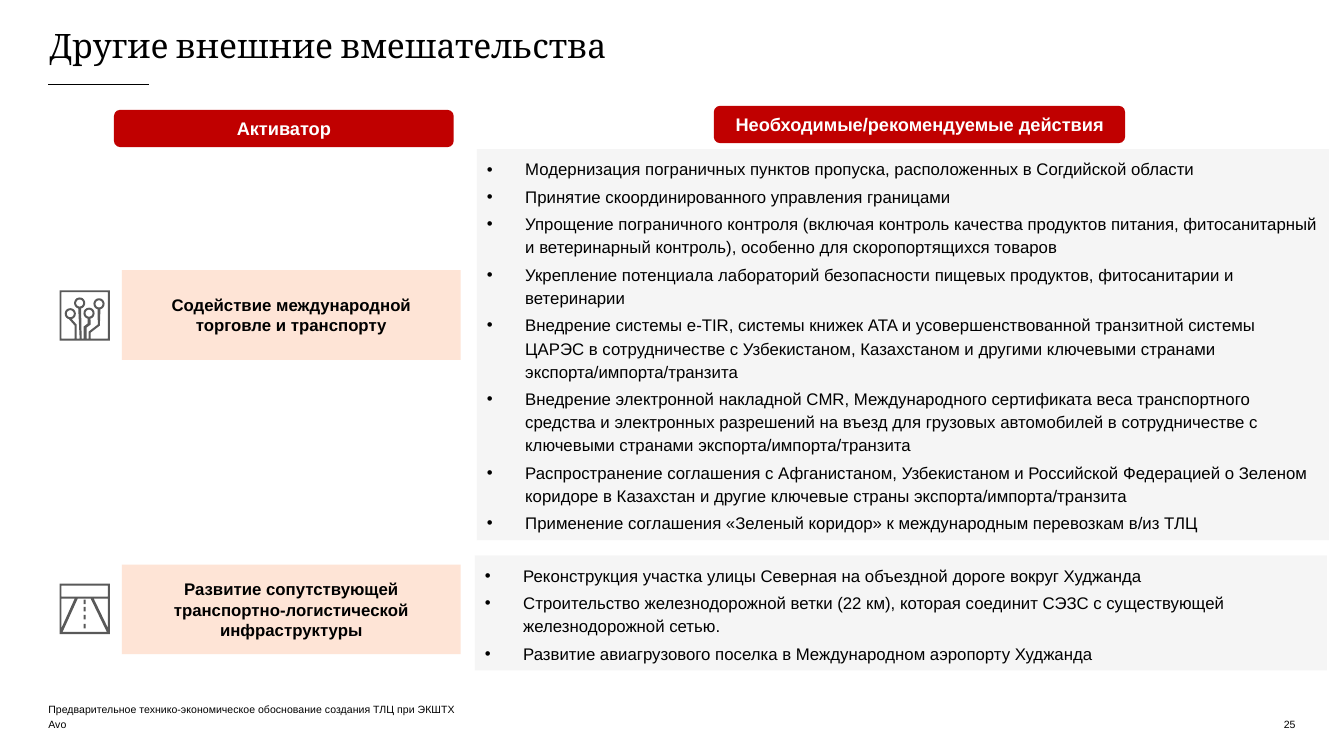
from dataclasses import dataclass
from math import cos, radians, sin

from lxml.etree import SubElement
from pptx import Presentation
from pptx.dml.color import RGBColor
from pptx.enum.shapes import MSO_CONNECTOR as Connector, MSO_SHAPE as Preset
from pptx.enum.text import MSO_ANCHOR as Anchor, MSO_AUTO_SIZE as AutoSize, PP_ALIGN as Align
from pptx.oxml.ns import qn
from pptx.util import Inches, Pt

BLACK = RGBColor(0x00, 0x00, 0x00)
WHITE = RGBColor(0xFF, 0xFF, 0xFF)
RED = RGBColor(0xC0, 0x00, 0x00)
PEACH = RGBColor(0xFE, 0xD8, 0xC4)
PALE_GREY = RGBColor(0xF2, 0xF2, 0xF2)
ICON_GREY = RGBColor(0x59, 0x59, 0x59)

WIDTH, HEIGHT = Inches(13.33), Inches(7.5)
MARGIN = 3.6
Points = list[tuple[float, float]]


@dataclass
class Area:
    """Left, top, width and height in percent of the slide."""
    left: float
    top: float
    width: float
    height: float

    def emu(self) -> tuple[int, int, int, int]:
        return (int(WIDTH * self.left / 100), int(HEIGHT * self.top / 100),
                int(WIDTH * self.width / 100), int(HEIGHT * self.height / 100))


@dataclass
class Style:
    size: float
    color: RGBColor = BLACK
    bold: bool = False
    font: str = "Arial"
    align: Align = Align.LEFT


@dataclass
class Label:
    text: str
    area: Area
    style: Style


@dataclass
class Enabler:
    name: str
    top: float
    actions: list[str]
    actions_area: Area
    icon_top: float
    icon: list[Points]


@dataclass
class Node:
    """Circuit node: centre and the two sides of its trace."""
    x: float
    y: float
    right: Points
    left: Points


def arc(x: float, y: float, radius: float, start: int, end: int) -> Points:
    return [(x + radius * cos(radians(angle)), y + radius * sin(radians(angle)))
            for angle in range(start, end - 1, -15)]


def rectangle(left: float, top: float, right: float, bottom: float) -> Points:
    return [(left, top), (right, top), (right, bottom), (left, bottom)]


# Icon outlines, in hundredths of an inch
NODES = [
    Node(39.2, 13.5, [(31, 48), (31, 42), (40, 35)], [(38, 34), (29, 41), (29, 48)]),
    Node(29.3, 22.8, [(27, 48), (27, 37), (31, 34)], [(28, 33), (24, 36), (24, 48)]),
    Node(20, 12.7, [(22, 48)], [(20, 48)]),
    Node(10.7, 23.3, [(17, 48), (17, 34)], [(15, 35), (15, 48)]),
]
FRAME = rectangle(0, 0, 50, 50)
CIRCUIT_FIELD = [point for node in NODES
                 for point in node.right + arc(node.x, node.y, 5.5, 75, -255) + node.left]
CIRCUIT = [FRAME, CIRCUIT_FIELD + [(2, 48), (2, 2), (48, 2), (48, 48)],
           *[arc(node.x, node.y, 3.5, 360, 15) for node in NODES]]
ROAD = [FRAME, rectangle(2, 2, 48, 13),
        [(18, 15), (31, 15), (47, 48), (3, 48)],
        [(2, 44), (2, 15), (15, 15)], [(34, 15), (48, 15), (48, 44)],
        *[rectangle(24, top, 26, top + 4.5) for top in (16, 23, 31, 40)]]

# Content
HEADING = Style(13, WHITE, True, align=Align.CENTER)
ENABLER = Style(12, bold=True, align=Align.CENTER)
ACTION = Style(12)
SMALL = Style(7.5)
TITLE = Label("Другие внешние вмешательства", Area(3.68, 3.33, 92.7, 8), Style(24, font="Cambria"))
HEADINGS = [
    Label("Активатор", Area(8.48, 14.53, 25.28, 4.93), HEADING),
    Label("Необходимые/рекомендуемые действия", Area(53.11, 14, 30.6, 4.93), HEADING),
]
FOOTERS = [
    Label("Предварительное технико-экономическое обоснование создания ТЛЦ при ЭКШТХ",
          Area(MARGIN, 92.67, 44.94, 2), SMALL),
    Label("Avo", Area(MARGIN, 94.67, 44.94, 2), SMALL),
    Label("25", Area(81.92, 94.67, 14.48, 2), Style(7.5, align=Align.RIGHT)),
]
ENABLERS = [
    Enabler("Содействие международной торговле и транспорту", 35.73, [
        "Модернизация пограничных пунктов пропуска, расположенных в Согдийской области",
        "Принятие скоординированного управления границами",
        "Упрощение пограничного контроля (включая контроль качества продуктов питания, "
        "фитосанитарный и ветеринарный контроль), особенно для скоропортящихся товаров",
        "Укрепление потенциала лабораторий безопасности пищевых продуктов, фитосанитарии "
        "и ветеринарии",
        "Внедрение системы e-TIR, системы книжек ATA и усовершенствованной транзитной системы "
        "ЦАРЭС в сотрудничестве с Узбекистаном, Казахстаном и другими ключевыми странами "
        "экспорта/импорта/транзита",
        "Внедрение электронной накладной CMR, Международного сертификата веса транспортного "
        "средства и электронных разрешений на въезд для грузовых автомобилей в сотрудничестве "
        "с ключевыми странами экспорта/импорта/транзита",
        "Распространение соглашения с Афганистаном, Узбекистаном и Российской Федерацией "
        "о Зеленом коридоре в Казахстан и другие ключевые страны экспорта/импорта/транзита",
        "Применение соглашения «Зеленый коридор» к международным перевозкам в/из ТЛЦ",
    ], Area(35.48, 19.73, 63.39, 51.73), 38.4, CIRCUIT),
    Enabler("Развитие сопутствующей транспортно-логистической инфраструктуры", 74.67, [
        "Реконструкция участка улицы Северная на объездной дороге вокруг Худжанда",
        "Строительство железнодорожной ветки (22 км), которая соединит СЭЗС с существующей "
        "железнодорожной сетью.",
        "Развитие авиагрузового поселка в Международном аэропорту Худжанда",
    ], Area(35.33, 73.47, 63.39, 15.2), 77.2, ROAD),
]


def write(shape, text: str, style: Style, anchor: Anchor) -> None:
    frame = shape.text_frame
    frame.text = text
    frame.word_wrap = True
    frame.auto_size = AutoSize.NONE
    frame.vertical_anchor = anchor
    for para in frame.paragraphs:
        para.alignment = style.align
        for span in para.runs:
            font = span.font
            font.size, font.bold, font.name = Pt(style.size), style.bold, style.font
            font.color.rgb = style.color


def remove_insets(shape) -> None:
    frame = shape.text_frame
    frame.margin_left = frame.margin_right = frame.margin_top = frame.margin_bottom = 0


def paint(shape, color: RGBColor, opacity: int = 100) -> None:
    shape.fill.solid()
    shape.fill.fore_color.rgb = color
    if opacity < 100:
        tint = shape.fill._xPr.find(qn("a:solidFill"))[0]
        SubElement(tint, qn("a:alpha"), val=str(opacity * 1000))
    shape.line.fill.background()


def place(shape, area: Area) -> None:
    shape.left, shape.top, shape.width, shape.height = area.emu()


def draw_box(page, preset: Preset, label: Label, color: RGBColor, opacity: int = 100) -> None:
    box = page.shapes.add_shape(preset, *label.area.emu())
    box.shadow.inherit = False
    paint(box, color, opacity)
    write(box, label.text, label.style, Anchor.MIDDLE)


def draw_icon(page, contours: list[Points], top: float) -> None:
    scaled = [[(round(x * 10), round(y * 10)) for x, y in contour] for contour in contours]
    builder = page.shapes.build_freeform(*scaled[0][0], scale=914.4)
    for contour in scaled:
        builder.move_to(*contour[0])
        builder.add_line_segments(contour[1:], close=True)
    left, y, _, _ = Area(4.43, top, 0, 0).emu()
    icon = builder.convert_to_shape(left, y)
    icon.shadow.inherit = False
    paint(icon, ICON_GREY)


def fill_actions(body, enabler: Enabler) -> None:
    place(body, enabler.actions_area)
    paint(body, PALE_GREY, 70)
    write(body, "\n".join(enabler.actions), ACTION, Anchor.MIDDLE)
    for para in body.text_frame.paragraphs:
        props = para._p.get_or_add_pPr()
        props.set("marL", str(Inches(0.38)))
        props.set("indent", str(-Inches(0.38)))
        SubElement(props, qn("a:buFont"), typeface="Arial")
        SubElement(props, qn("a:buChar"), char="•")
        para.line_spacing, para.space_before, para.space_after = 1.15, Pt(0), Pt(3)


def main() -> None:
    deck = Presentation()
    deck.slide_width, deck.slide_height = WIDTH, HEIGHT
    page = deck.slides.add_slide(deck.slide_layouts.get_by_name("Two Content"))

    # Title and its rule
    title, *bodies = page.placeholders
    place(title, TITLE.area)
    write(title, TITLE.text, TITLE.style, Anchor.TOP)
    remove_insets(title)
    left, y, length, _ = Area(MARGIN, 11.2, 7.5, 0).emu()
    rule = page.shapes.add_connector(Connector.STRAIGHT, left, y, left + length, y)
    rule.line.color.rgb, rule.line.width = BLACK, Pt(1)
    SubElement(rule._element.spPr, qn("a:effectLst"))

    # Column headings
    for heading in HEADINGS:
        draw_box(page, Preset.ROUNDED_RECTANGLE, heading, RED)

    # Enablers with their actions
    for enabler, body in zip(ENABLERS, bodies):
        label = Label(enabler.name, Area(9.08, enabler.top, 25.2, 11.87), ENABLER)
        draw_box(page, Preset.RECTANGLE, label, PEACH, 69)
        fill_actions(body, enabler)
        draw_icon(page, enabler.icon, enabler.icon_top)

    # Footer
    for footer in FOOTERS:
        box = page.shapes.add_textbox(*footer.area.emu())
        write(box, footer.text, footer.style, Anchor.BOTTOM)
        remove_insets(box)

    deck.save("out.pptx")


if __name__ == "__main__":
    main()
